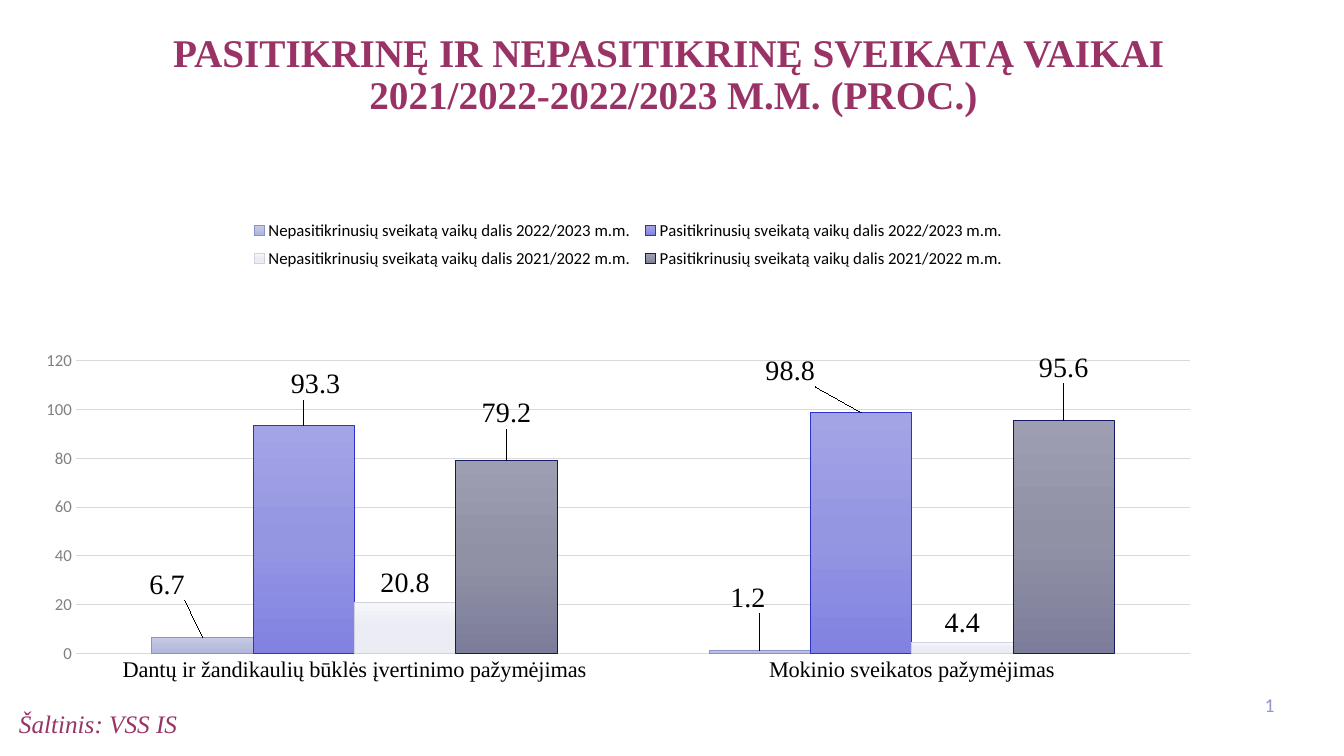
from lxml import etree
from pptx import Presentation
from pptx.chart.data import CategoryChartData
from pptx.dml.color import RGBColor
from pptx.enum.chart import (XL_CHART_TYPE, XL_LABEL_POSITION,
                             XL_LEGEND_POSITION, XL_TICK_MARK)
from pptx.enum.text import MSO_ANCHOR, PP_ALIGN
from pptx.oxml import parse_xml
from pptx.oxml.ns import nsdecls, qn
from pptx.util import Inches, Pt

COLUMNS = XL_CHART_TYPE.COLUMN_CLUSTERED
OUTSIDE_END = XL_LABEL_POSITION.OUTSIDE_END
LEGEND_TOP = XL_LEGEND_POSITION.TOP
NO_TICK = XL_TICK_MARK.NONE
TOP, MIDDLE = MSO_ANCHOR.TOP, MSO_ANCHOR.MIDDLE
LEFT, CENTER, RIGHT = PP_ALIGN.LEFT, PP_ALIGN.CENTER, PP_ALIGN.RIGHT

SERIF, SANS = "Times New Roman", "Calibri"
PLUM = RGBColor(0x99, 0x33, 0x66)
PERIWINKLE = RGBColor(0x8E, 0x96, 0xCD)
BLACK = RGBColor(0, 0, 0)
GRAY = RGBColor(0x80, 0x80, 0x80)
GRID = RGBColor(0xD9, 0xD9, 0xD9)

CATEGORIES = ["Dantų ir žandikaulių būklės įvertinimo pažymėjimas",
              "Mokinio sveikatos pažymėjimas"]
# name, values, gradient from top to bottom, outline, label shifts (x, y)
SERIES = [
    ("Nepasitikrinusių sveikatą vaikų dalis 2022/2023 m.m.", (6.7, 1.2),
     ("C8CBE6", "BBC0DF", "B1B6DD"), RGBColor(0x8A, 0x92, 0xC8),
     ((-0.03, -0.06), (-0.01, -0.06))),
    ("Pasitikrinusių sveikatą vaikų dalis 2022/2023 m.m.", (93.3, 98.8),
     ("A3A4E6", "9596E2", "8182E2"), RGBColor(0x2D, 0x33, 0xCB),
     ((0.01, -0.04), (-0.06, -0.04))),
    ("Nepasitikrinusių sveikatą vaikų dalis 2021/2022 m.m.", (20.8, 4.4),
     ("F6F7FA", "EBECF4", "E9EAF3"), RGBColor(0xD0, 0xD2, 0xE3), ()),
    ("Pasitikrinusių sveikatą vaikų dalis 2021/2022 m.m.", (79.2, 95.6),
     ("9E9EB2", "9191A6", "7C7D9A"), RGBColor(0x15, 0x18, 0x65),
     ((0, -0.05), (0, -0.06))),
]


def set_font(font, size, color, name=SANS, bold=False, italic=False):
    font.size, font.name = Pt(size), name
    font.bold, font.italic = bold, italic
    font.color.rgb = color


def write(sp, text, align=LEFT, anchor=TOP, spacing=None, **font):
    tf = sp.text_frame
    tf.word_wrap = True
    tf.vertical_anchor = anchor
    p = tf.paragraphs[0]
    p.text = text
    p.alignment = align
    p.line_spacing = spacing
    for r in p.runs:
        set_font(r.font, **font)
    return p


def place(sp, left, top, width, height):
    sp.left, sp.top = Inches(left), Inches(top)
    sp.width, sp.height = Inches(width), Inches(height)


def add_text(slide, box, text, **style):
    sp = slide.shapes.add_textbox(*map(Inches, box))
    return write(sp, text, **style)


def make_slide_number(p):
    """Turn the paragraph's run into a slide number field."""
    r = p.runs[0]._r
    r.tag = qn("a:fld")
    r.set("id", "{B6F15528-21DE-4FAA-801E-634DDDAF4B2B}")
    r.set("type", "slidenum")


def manual_layout(target=None, edge=True, **fractions):
    layout = parse_xml(f"<c:layout {nsdecls('c')}><c:manualLayout/></c:layout>")
    items = [("layoutTarget", target)] if target else []
    if edge:
        items += [("xMode", "edge"), ("yMode", "edge")]
    for tag, value in items + list(fractions.items()):
        etree.SubElement(layout[0], qn(f"c:{tag}")).set("val", str(value))
    return layout


def set_layout(element, layout, index):
    """Replace the element's layout, putting the new one at index."""
    for old in element.findall(qn("c:layout")):
        element.remove(old)
    element.insert(index, layout)


def paint_series(series, colors, outline):
    stops = "".join(f'<a:gs pos="{i * 50000}"><a:srgbClr val="{c}"/></a:gs>'
                    for i, c in enumerate(colors))
    series._element.get_or_add_spPr().insert(0, parse_xml(
        f"<a:gradFill {nsdecls('a')}><a:gsLst>{stops}</a:gsLst>"
        '<a:lin ang="5400000" scaled="0"/></a:gradFill>'))
    series.format.line.color.rgb = outline
    series.format.line.width = Pt(0.75)
    series.invert_if_negative = False


def label_series(series, shifts):
    labels = series.data_labels
    labels.show_value = True
    labels.position = OUTSIDE_END
    set_font(labels.font, 20, BLACK, SERIF)
    for i, (x, y) in enumerate(shifts):
        label = series.points[i].data_label
        set_font(label.font, 20, BLACK, SERIF)
        label.position = OUTSIDE_END
        d_lbl = series._element.findall(".//" + qn("c:dLbl"))[i]
        set_layout(d_lbl, manual_layout(edge=False, x=x, y=y), 1)


def format_axis(axis, **font):
    axis.major_tick_mark = axis.minor_tick_mark = NO_TICK
    axis.format.line.fill.background()
    set_font(axis.tick_labels.font, **font)


def add_health_chart(slide):
    data = CategoryChartData(number_format="General")
    data.categories = CATEGORIES
    for name, values, *_ in SERIES:
        data.add_series(name, values)
    box = map(Inches, (0.32, 1.94, 11.71, 5.41))
    chart = slide.shapes.add_chart(COLUMNS, *box, data).chart
    set_font(chart.font, 10, BLACK)
    chart.has_title = False

    # Columns and their labels
    plot = chart.plots[0]
    plot.gap_width, plot.overlap = 150, 0
    plot.vary_by_categories = False
    for series, (_, _, colors, outline, shifts) in zip(plot.series, SERIES):
        paint_series(series, colors, outline)
        label_series(series, shifts)
    plot_area = chart._chartSpace.find(".//" + qn("c:plotArea"))
    set_layout(plot_area, manual_layout("inner", x=0.037, y=0.303,
                                        w=0.944, h=0.537), 0)

    # Axes
    format_axis(chart.category_axis, size=16, color=BLACK, name=SERIF)
    value_axis = chart.value_axis
    format_axis(value_axis, size=12, color=GRAY)
    value_axis.minimum_scale, value_axis.maximum_scale = 0, 120
    value_axis.major_unit = 20
    value_axis.has_major_gridlines = True
    line = value_axis.major_gridlines.format.line
    line.color.rgb, line.width = GRID, Pt(0.75)

    # Legend
    chart.has_legend = True
    legend = chart.legend
    legend.position = LEGEND_TOP
    legend.include_in_layout = False
    set_font(legend.font, 12, BLACK)
    set_layout(legend._element, manual_layout(x=0.18, y=0.03, w=0.65, h=0.12), 1)


def main():
    prs = Presentation()
    prs.slide_width, prs.slide_height = Inches(13.33), Inches(7.5)
    slide = prs.slides.add_slide(prs.slide_layouts[5])

    # Title
    title = slide.shapes.title
    place(title, -0.12, 0.28, 13.5, 1.38)
    write(title, "PASITIKRINĘ IR NEPASITIKRINĘ SVEIKATĄ VAIKAI\v"
          " 2021/2022-2022/2023 M.M. (PROC.)", align=CENTER, spacing=0.9,
          size=28, color=PLUM, name=SERIF, bold=True)

    add_health_chart(slide)

    # Source and slide number
    add_text(slide, (0.09, 6.98, 6.3, 0.38), "Šaltinis: VSS IS",
             size=18, color=PLUM, name=SERIF, italic=True)
    number = add_text(slide, (12.22, 6.79, 0.52, 0.4), "6", align=RIGHT,
                      anchor=MIDDLE, size=14, color=PERIWINKLE)
    make_slide_number(number)
    prs.save("out.pptx")


if __name__ == "__main__":
    main()
